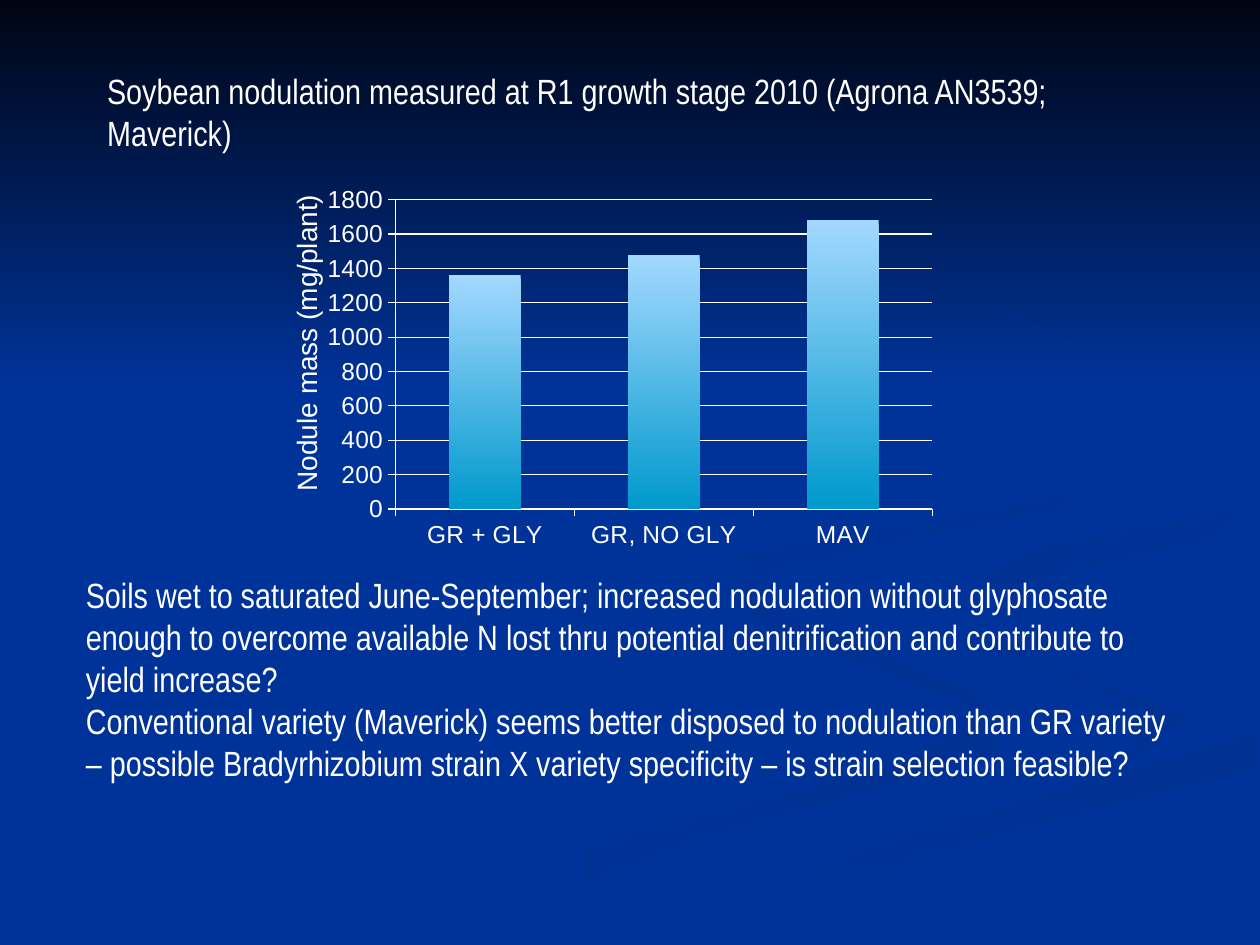
"""Builds a slide on soybean nodulation with a column chart and two findings."""
from pptx import Presentation
from pptx.chart.data import CategoryChartData
from pptx.dml.color import RGBColor as RGB
from pptx.enum.chart import XL_CHART_TYPE as ChartType, XL_TICK_MARK as Tick
from pptx.enum.shapes import MSO_SHAPE as Preset
from pptx.enum.text import MSO_ANCHOR as Anchor, MSO_AUTO_SIZE as AutoSize, PP_ALIGN as Align
from pptx.util import Pt

COLORS = {name: RGB.from_string(value) for name, value in {
    "night": "000514", "blue": "003399", "shade": "003193",
    "white": "FFFFFF", "sky": "A3D8FF", "teal": "0099CC"}.items()}


def paint(fill, start, end, angle):
    """Fill with a two-colour gradient at a clockwise angle."""
    fill.gradient()
    fill.gradient_angle = (360 - angle) % 360
    for stop, name, position in zip(fill.gradient_stops, (start, end), (0, 1)):
        stop.color.rgb = COLORS[name]
        stop.position = position


def write(box, place, texts, font, size, wrap=True):
    """Place a text shape and write its paragraphs."""
    for name, value in zip(("left", "top", "width", "height"), place):
        setattr(box, name, Pt(value))
    frame = box.text_frame
    for name, value in {"word_wrap": wrap, "auto_size": AutoSize.NONE,
                        "vertical_anchor": Anchor.TOP}.items():
        setattr(frame, name, value)
    for index, text in enumerate(texts):
        para = frame.add_paragraph() if index else frame.paragraphs[0]
        para.alignment = Align.LEFT
        span = para.add_run()
        span.text = text
        for name, value in {"name": font, "size": Pt(size)}.items():
            setattr(span.font, name, value)
        span.font.color.rgb = COLORS["white"]


deck = Presentation()
deck.slide_width, deck.slide_height = Pt(720), Pt(540)
page = deck.slides.add_slide(deck.slide_layouts[5])
backdrop = page.background.fill
backdrop.solid()
backdrop.fore_color.rgb = COLORS["blue"]

sky = page.shapes.add_shape(Preset.RECTANGLE, 0, 0, Pt(720), Pt(222))
sky.shadow.inherit = False
sky.line.fill.background()
paint(sky.fill, "night", "blue", 90)

ribbons = [
    ("blue", "shade", 0, [(562, 398), (414, 335), (433, 356), (566, 408), (514, 436),
                          (330, 485), (216, 539), (260, 539), (383, 485), (570, 430)]),
    ("blue", "shade", 45, [(679, 410), (536, 353), (521, 334), (537, 360), (653, 405),
                           (644, 436)]),
    ("shade", "blue", 90, [(362, 539), (411, 539), (520, 491), (719, 438), (719, 418),
                           (501, 482)]),
    ("shade", "blue", 45, [(562, 331), (595, 357), (585, 333), (719, 302), (719, 289),
                           (591, 313)]),
    ("shade", "blue", 45, [(500, 312), (667, 280), (688, 238), (572, 176), (683, 236),
                           (644, 276), (422, 317), (445, 360), (421, 333)]),
]
for start, end, angle, points in ribbons:
    builder = page.shapes.build_freeform(*points[0], scale=Pt(1))
    builder.add_line_segments(points[1:], close=True)
    ribbon = builder.convert_to_shape()
    ribbon.shadow.inherit = False
    ribbon.line.fill.background()
    paint(ribbon.fill, start, end, angle)

data = CategoryChartData()
data.categories = ["GR + GLY", "GR, NO GLY", "MAV"]
data.add_series("Series 1", [1360, 1480, 1680])
chart = page.shapes.add_chart(ChartType.COLUMN_CLUSTERED, Pt(180), Pt(102),
                              Pt(360), Pt(216), data).chart
chart.has_legend = chart.has_title = False
plot = chart.plots[0]
plot.gap_width, plot.vary_by_categories = 150, False
paint(plot.series[0].format.fill, "sky", "teal", 90)

values, categories = chart.value_axis, chart.category_axis
values.minimum_scale, values.maximum_scale, values.major_unit = 0, 1800, 200
values.has_major_gridlines = True
for axis in (values, categories):
    axis.major_tick_mark = Tick.OUTSIDE
    font = axis.tick_labels.font
    for name, value in {"name": "Arial", "size": Pt(14), "bold": False}.items():
        setattr(font, name, value)
    font.color.rgb = COLORS["white"]
for item in (values, categories, values.major_gridlines):
    item.format.line.width = Pt(0.75)
    item.format.line.color.rgb = COLORS["white"]

label = page.shapes.add_textbox(0, 0, 0, 0)
write(label, (82, 181.5, 186, 26.5), ["Nodule mass (mg/plant)"], "Arial", 16, wrap=False)
label.rotation = 270

title = page.shapes.title
write(title, (54, 36, 600, 55.5),
      ["Soybean nodulation measured at R1 growth stage 2010 (Agrona AN3539; Maverick)"],
      "Arial Narrow", 20)
page.shapes._spTree.append(title._element)

findings = page.shapes.add_textbox(0, 0, 0, 0)
write(findings, (42, 324, 642, 128), [
    "Soils wet to saturated June-September; increased nodulation without glyphosate enough to "
    "overcome available N lost thru potential denitrification and contribute to yield increase?",
    "Conventional variety (Maverick) seems better disposed to nodulation than GR variety – "
    "possible Bradyrhizobium strain X variety specificity – is strain selection feasible?"],
    "Arial Narrow", 20)

deck.save("out.pptx")
